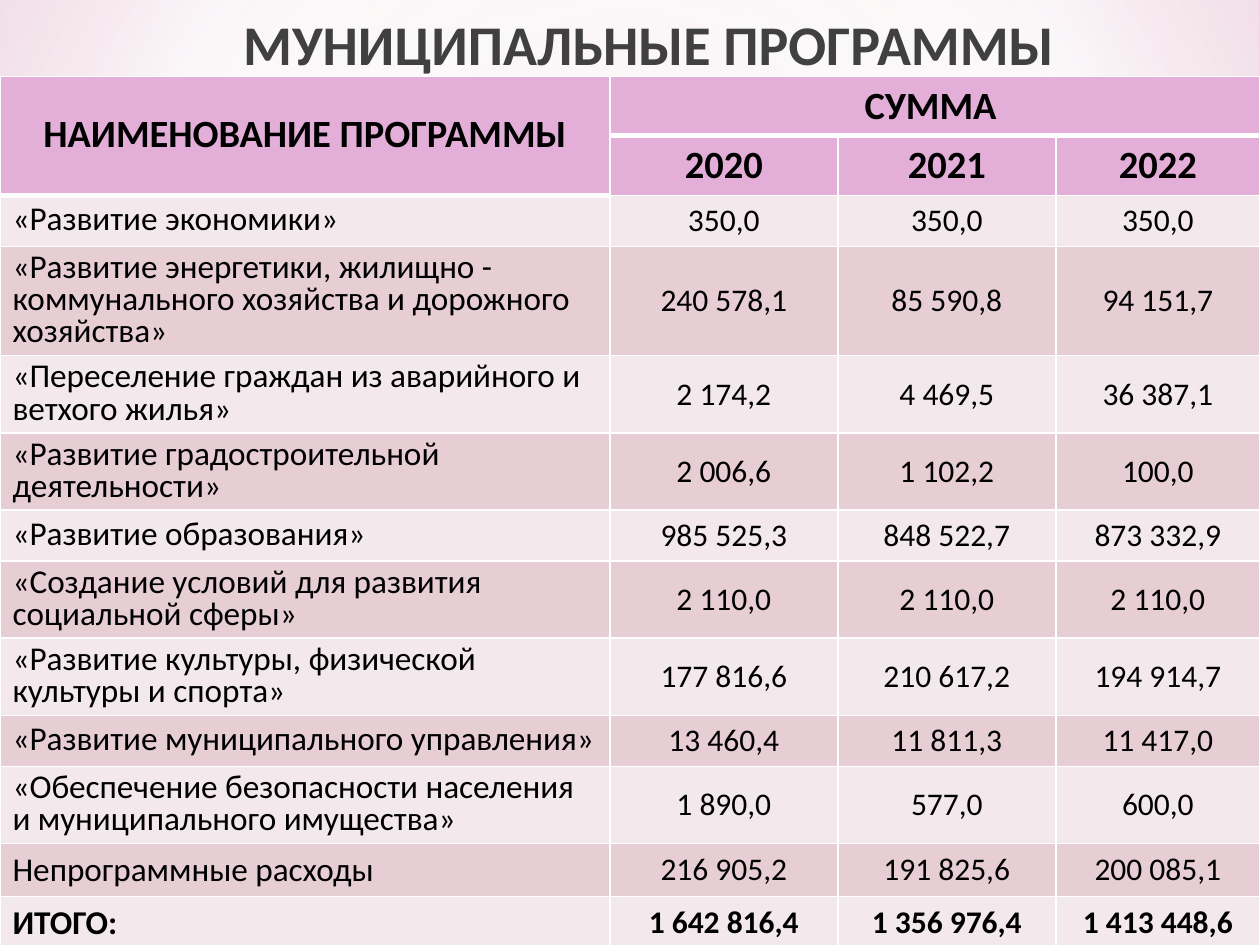
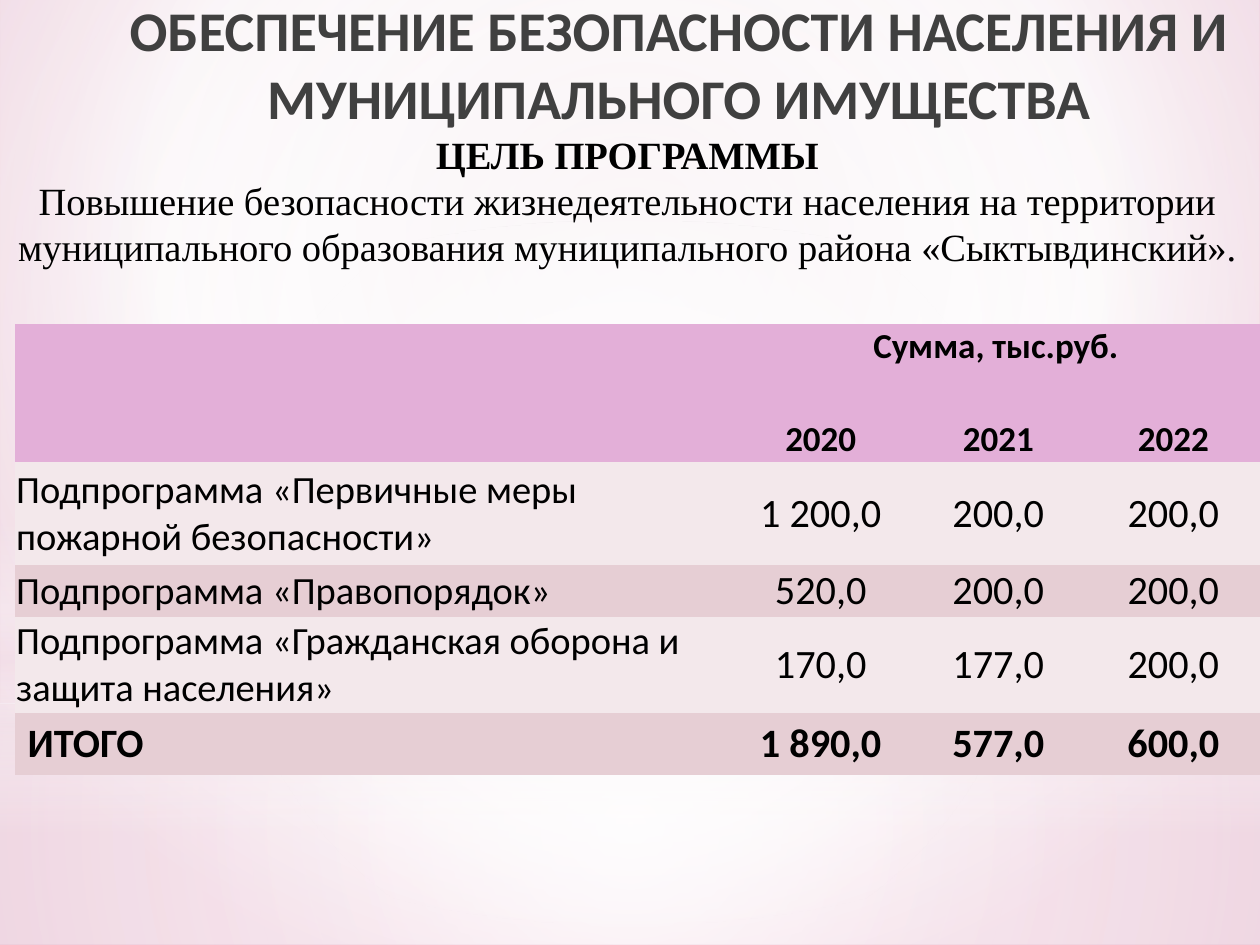
from lxml.etree import SubElement
from pptx import Presentation
from pptx.dml.color import RGBColor
from pptx.enum.shapes import MSO_SHAPE
from pptx.enum.text import MSO_ANCHOR, MSO_AUTO_SIZE, PP_ALIGN
from pptx.oxml.ns import qn
from pptx.util import Pt

WIDTH, HEIGHT = 720, 540
WHITE, BLACK, TITLE_GREY = "FFFFFF", "000000", "404040"
HEADER_PINK, BANDS = "E3AFD8", ("F3E8EB", "E6CED4")
PALE_PINK = "F4E7ED"
FONT = "Calibri"
NO_GRID_STYLE = "{2D5ABB26-0587-4C30-8999-92F81FD0307C}"
TITLE_ONLY = 5
CENTER = (50, 50, 50, 50)

# Left, top, width, height, preset, stops (position, colour, opacity), circle focus
GLOWS = [
    (0, 401.8, WIDTH, 138.2, MSO_SHAPE.RECTANGLE,
     [(0, WHITE, 91), (37, WHITE, 76), (100, PALE_PINK, 79)], CENTER),
    (0, 0, WIDTH, 401.8, MSO_SHAPE.RECTANGLE,
     [(0, WHITE, 89), (48, WHITE, 62), (100, PALE_PINK, 79)], CENTER),
    (0, 296.6, WIDTH, 180, MSO_SHAPE.RECTANGLE,
     [(0, WHITE, 0), (29, WHITE, 30), (45, PALE_PINK, 40),
      (55, WHITE, 26), (65, PALE_PINK, 60), (100, WHITE, 0)], None),
    (0, 126, WIDTH, 401.8, MSO_SHAPE.OVAL,
     [(0, WHITE, 100), (56, WHITE, 0)], CENTER),
]

# Name, number of lines in the name, sums for 2020-2022
PROGRAMS = [
    ("«Развитие экономики»", 1, "350,0", "350,0", "350,0"),
    ("«Развитие энергетики, жилищно - коммунального хозяйства и дорожного хозяйства»",
     3, "240 578,1", "85 590,8", "94 151,7"),
    ("«Переселение граждан из аварийного и ветхого жилья»",
     2, "2 174,2", "4 469,5", "36 387,1"),
    ("«Развитие градостроительной деятельности»", 2, "2 006,6", "1 102,2", "100,0"),
    ("«Развитие образования»", 1, "985 525,3", "848 522,7", "873 332,9"),
    ("«Создание условий для развития социальной сферы»",
     2, "2 110,0", "2 110,0", "2 110,0"),
    ("«Развитие культуры, физической культуры и спорта»",
     2, "177 816,6", "210 617,2", "194 914,7"),
    ("«Развитие муниципального управления»", 1, "13 460,4", "11 811,3", "11 417,0"),
    ("«Обеспечение безопасности населения и муниципального имущества»",
     2, "1 890,0", "577,0", "600,0"),
    ("Непрограммные расходы", 1, "216 905,2", "191 825,6", "200 085,1"),
    ("ИТОГО:", 1, "1 642 816,4", "1 356 976,4", "1 413 448,6"),
]
LINE_ROW_HEIGHTS = {1: 29.2, 2: 44.1, 3: 62.4}

SUBPROGRAMS = [
    ("Подпрограмма «Первичные меры пожарной безопасности»", "1 200,0", "200,0", "200,0"),
    ("Подпрограмма «Правопорядок»", "520,0", "200,0", "200,0"),
    ("Подпрограмма «Гражданская оборона и защита населения»", "170,0", "177,0", "200,0"),
    ("ИТОГО", "1 890,0", "577,0", "600,0"),
]
YEARS = ("2020", "2021", "2022")


def rgb(hex_color):
    return RGBColor.from_string(hex_color)


def apply_formats(target, formats):
    for name, value in formats.items():
        setattr(target, name, value)


def format_paragraph(paragraph, size, bold=False, color=BLACK, font=FONT,
                     align=PP_ALIGN.CENTER, line_spacing=1.0):
    apply_formats(paragraph, {"alignment": align, "line_spacing": line_spacing})
    apply_formats(paragraph.font, {"size": Pt(size), "bold": bold, "name": font})
    paragraph.font.color.rgb = rgb(color)


def set_gradient(parent, stops, focus):
    """Turn the solid fill under parent into a circular or top-down gradient."""
    solid = parent.find(".//" + qn("a:solidFill"))
    gradient = parent.makeelement(qn("a:gradFill"), {"rotWithShape": "1"})
    stop_list = SubElement(gradient, qn("a:gsLst"))
    for position, color, opacity in stops:
        stop = SubElement(stop_list, qn("a:gs"), pos=str(position * 1000))
        shade = SubElement(stop, qn("a:srgbClr"), val=color)
        if opacity < 100:
            SubElement(shade, qn("a:alpha"), val=str(opacity * 1000))
    if focus:
        circle = SubElement(gradient, qn("a:path"), {"path": "circle"})
        sides = {side: str(share * 1000) for side, share in zip("ltrb", focus)}
        SubElement(circle, qn("a:fillToRect"), sides)
    else:
        SubElement(gradient, qn("a:lin"), ang="5400000", scaled="0")
    solid.getparent().replace(solid, gradient)


def decorate_master(master, slide):
    """Put the backdrop and its glows on the master; the slide only creates the shapes."""
    backdrop = master.background.fill
    backdrop.solid()
    backdrop.fore_color.rgb = rgb(WHITE)
    set_gradient(master.element.cSld.find(qn("p:bg")),
                 [(0, "EDDAE2", 100), (60, WHITE, 100), (100, "E09DBC", 100)],
                 (20, 10, 20, 60))
    for index, (left, top, width, height, preset, stops, focus) in enumerate(GLOWS):
        glow = slide.shapes.add_shape(preset, Pt(left), Pt(top), Pt(width), Pt(height))
        glow.shadow.inherit = False
        glow.line.fill.background()
        glow.fill.solid()
        glow.fill.fore_color.rgb = rgb(WHITE)
        set_gradient(glow.element.spPr, stops, focus)
        master.element.cSld.spTree.insert(2 + index, glow.element)


def set_title(slide, text, left, top, width, height):
    title = slide.shapes.title
    apply_formats(title, {"left": Pt(left), "top": Pt(top),
                          "width": Pt(width), "height": Pt(height)})
    frame = title.text_frame
    frame.text = text
    apply_formats(frame, {"vertical_anchor": MSO_ANCHOR.TOP, "word_wrap": True,
                          "auto_size": MSO_AUTO_SIZE.NONE, "margin_top": Pt(5.5)})
    format_paragraph(frame.paragraphs[0], 32, True, TITLE_GREY)


def add_plain_table(slide, left, top, widths, heights):
    frame = slide.shapes.add_table(len(heights), len(widths), Pt(left), Pt(top),
                                   Pt(sum(widths)), Pt(sum(heights)))
    table = frame.table
    frame.element.find(".//" + qn("a:tableStyleId")).text = NO_GRID_STYLE
    for column, width in zip(table.columns, widths):
        column.width = Pt(width)
    for row, height in zip(table.rows, heights):
        row.height = Pt(height)
    return table


def add_borders(table, heavy_bottoms):
    """Draw white 1 pt borders, 3 pt under the (row, column) cells listed."""
    for row_index, row in enumerate(table.rows):
        for column_index, cell in enumerate(row.cells):
            heavy = {"T": (row_index - 1, column_index) in heavy_bottoms,
                     "B": (row_index, column_index) in heavy_bottoms}
            properties = cell._tc.get_or_add_tcPr()
            for side in "LRTB":
                border = SubElement(properties, qn(f"a:ln{side}"),
                                    w=str(Pt(3 if heavy.get(side) else 1)))
                fill = SubElement(border, qn("a:solidFill"))
                SubElement(fill, qn("a:srgbClr"), val=WHITE)


def fill_bands(table):
    for index, row in enumerate(table.rows):
        for cell in row.cells:
            cell.fill.solid()
            cell.fill.fore_color.rgb = rgb(HEADER_PINK if index < 2 else BANDS[index % 2])


def write_cell(cell, text, size, bold=False, anchor=MSO_ANCHOR.MIDDLE, inset=None, **style):
    cell.text = text
    cell.vertical_anchor = anchor
    if inset is not None:
        apply_formats(cell, {f"margin_{side}": Pt(inset)
                             for side in ("left", "right", "top", "bottom")})
    format_paragraph(cell.text_frame.paragraphs[0], size, bold, **style)


def write_header(table, sum_title, size, year_anchor, **style):
    table.cell(0, 0).merge(table.cell(1, 0))
    table.cell(0, 1).merge(table.cell(0, 3))
    write_cell(table.cell(0, 1), sum_title, size, True, MSO_ANCHOR.TOP, **style)
    for column, year in enumerate(YEARS, 1):
        write_cell(table.cell(1, column), year, size, True, year_anchor, **style)


def write_sums(table, row, sums, size, bold, **style):
    for column, amount in enumerate(sums, 1):
        write_cell(table.cell(row, column), amount, size, bold, **style)


def build_programs(slide):
    set_title(slide, "МУНИЦИПАЛЬНЫЕ ПРОГРАММЫ ", 28.8, 0, 691.2, 90)
    heights = [34, 34] + [LINE_ROW_HEIGHTS[lines] for _, lines, *_ in PROGRAMS]
    table = add_plain_table(slide, 0, 43.6, [348.5, 130.3, 124.6, 116.6], heights)
    add_borders(table, {(0, 0), (0, 1), (0, 2), (0, 3), (1, 0)})
    fill_bands(table)
    write_header(table, "СУММА ", 22, MSO_ANCHOR.TOP)
    write_cell(table.cell(0, 0), "НАИМЕНОВАНИЕ ПРОГРАММЫ", 22, True, line_spacing=0.8)
    for row, (name, _, *sums) in enumerate(PROGRAMS, 2):
        is_total = name == "ИТОГО:"
        is_summary = not name.startswith("«")
        write_cell(table.cell(row, 0), name, 19, is_total,
                   MSO_ANCHOR.TOP if is_summary else MSO_ANCHOR.MIDDLE,
                   align=PP_ALIGN.LEFT, line_spacing=1.0 if is_summary else 0.8)
        write_sums(table, row, sums, 18, is_total)


def add_goal(slide):
    goal = slide.shapes.add_textbox(Pt(-1.5), Pt(71.3), Pt(WIDTH), Pt(87.1)).text_frame
    apply_formats(goal, {"word_wrap": True, "auto_size": MSO_AUTO_SIZE.SHAPE_TO_FIT_TEXT})
    goal.text = ("ЦЕЛЬ ПРОГРАММЫ\n"
                 "Повышение безопасности жизнедеятельности населения на территории "
                 "муниципального образования муниципального района «Сыктывдинский».")
    for paragraph, bold in zip(goal.paragraphs, (True, False)):
        format_paragraph(paragraph, 22, bold, font="Times New Roman")


def build_safety(slide):
    set_title(slide, "ОБЕСПЕЧЕНИЕ БЕЗОПАСНОСТИ НАСЕЛЕНИЯ И МУНИЦИПАЛЬНОГО ИМУЩЕСТВА",
              48.2, -7.9, 679.7, 71.3)
    table = add_plain_table(slide, 8.6, 185, [409.7, 101.5, 101.5, 98.6],
                            [25.2, 53.2, 58.8, 29.2, 54.2, 35.2])
    fill_bands(table)
    write_header(table, "Сумма, тыс.руб.", 20, MSO_ANCHOR.BOTTOM, inset=0.7)
    for row, (name, *sums) in enumerate(SUBPROGRAMS, 2):
        is_total = name == "ИТОГО"
        if is_total:
            write_cell(table.cell(row, 0), name, 23, True, MSO_ANCHOR.TOP,
                       align=PP_ALIGN.LEFT)
        else:
            write_cell(table.cell(row, 0), name, 22, inset=0.7, align=PP_ALIGN.LEFT)
        write_sums(table, row, sums, 23, is_total, inset=0.7)
    add_goal(slide)


def main():
    prs = Presentation()
    apply_formats(prs, {"slide_width": Pt(WIDTH), "slide_height": Pt(HEIGHT)})
    programs, safety = (prs.slides.add_slide(prs.slide_layouts[TITLE_ONLY])
                        for _ in range(2))
    decorate_master(prs.slide_master, programs)
    build_programs(programs)
    build_safety(safety)
    prs.save("out.pptx")


if __name__ == "__main__":
    main()
